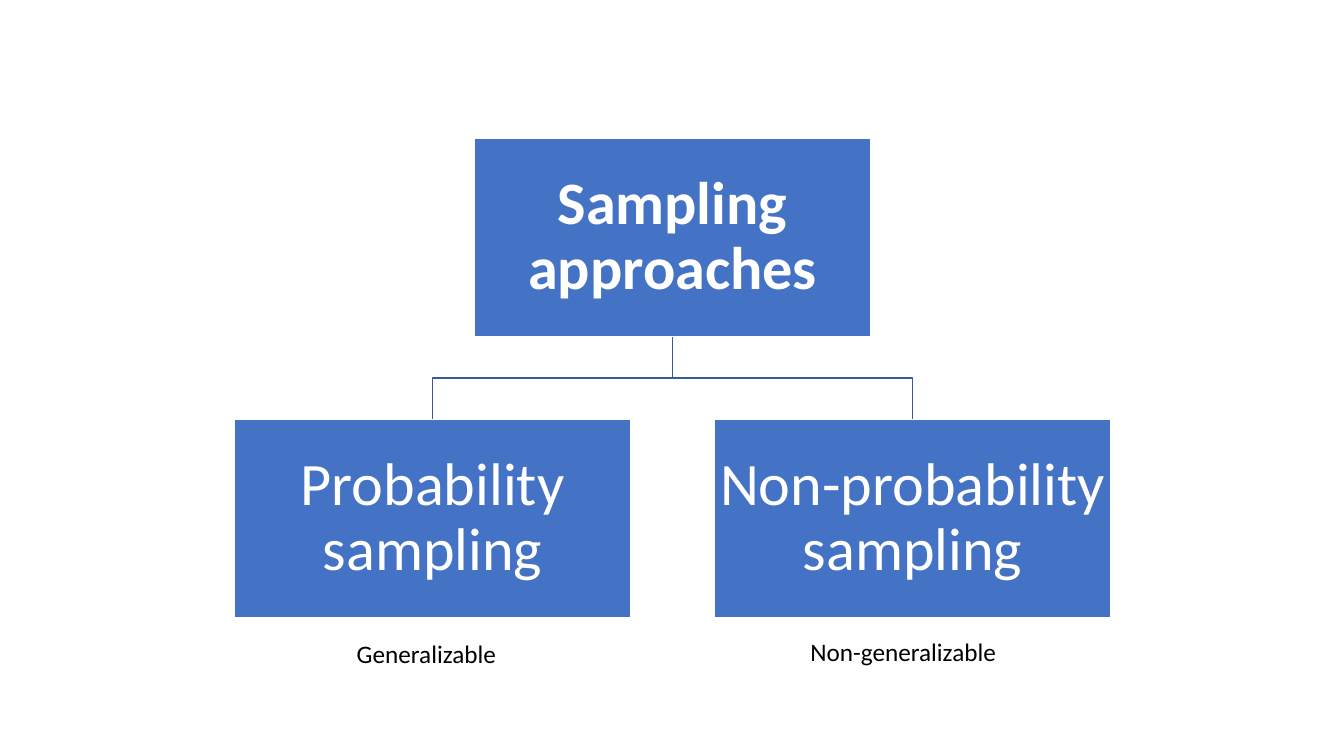
"""Build a slide with a tree of sampling approaches."""
import pptx
import pptx.dml.color
import pptx.enum.shapes
import pptx.enum.text
import pptx.util

Inches, Pt = pptx.util.Inches, pptx.util.Pt
BLUE = pptx.dml.color.RGBColor(0x44, 0x72, 0xC4)
LINE_BLUE = pptx.dml.color.RGBColor(0x36, 0x5B, 0x9D)
WHITE = pptx.dml.color.RGBColor(0xFF, 0xFF, 0xFF)
BLACK = pptx.dml.color.RGBColor(0x00, 0x00, 0x00)
FONT = "Calibri"

BOX_WIDTH, BOX_HEIGHT = 3.93, 1.97
ROOT_CENTER, ROOT_TOP = 6.67, 1.37
BRANCH_OFFSET, BRANCH_TOP = 2.38, 4.16
ROOT_BOTTOM = ROOT_TOP + BOX_HEIGHT
FORK = (ROOT_BOTTOM + BRANCH_TOP) / 2

deck = pptx.Presentation()
deck.slide_width = Inches(13.33)
deck.slide_height = Inches(7.5)
slide = deck.slides.add_slide(deck.slide_layouts[6])

for branch_center in (ROOT_CENTER + BRANCH_OFFSET, ROOT_CENTER - BRANCH_OFFSET):
    builder = slide.shapes.build_freeform(Inches(ROOT_CENTER), Inches(ROOT_BOTTOM))
    bends = [(ROOT_CENTER, FORK), (branch_center, FORK), (branch_center, BRANCH_TOP)]
    builder.add_line_segments([(Inches(x), Inches(y)) for x, y in bends], close=False)
    branch = builder.convert_to_shape()
    branch.shadow.inherit = False
    branch.fill.background()
    branch.line.color.rgb = LINE_BLUE
    branch.line.width = Pt(1)

approaches = [
    ("Sampling approaches", ROOT_CENTER, ROOT_TOP, True),
    ("Probability sampling", ROOT_CENTER - BRANCH_OFFSET, BRANCH_TOP, False),
    ("Non-probability sampling", ROOT_CENTER + BRANCH_OFFSET, BRANCH_TOP, False),
]
for label, center, top, bold in approaches:
    approach = slide.shapes.add_shape(
        pptx.enum.shapes.MSO_SHAPE.RECTANGLE,
        Inches(center - BOX_WIDTH / 2), Inches(top), Inches(BOX_WIDTH), Inches(BOX_HEIGHT))
    approach.shadow.inherit = False
    approach.fill.solid()
    approach.fill.fore_color.rgb = BLUE
    approach.line.color.rgb = WHITE
    approach.line.width = Pt(1)
    frame = approach.text_frame
    frame.word_wrap = True
    frame.vertical_anchor = pptx.enum.text.MSO_ANCHOR.MIDDLE
    frame.margin_left = frame.margin_right = Inches(0.03)
    frame.margin_top = frame.margin_bottom = Inches(0.03)
    paragraph = frame.paragraphs[0]
    paragraph.text = label
    paragraph.alignment = pptx.enum.text.PP_ALIGN.CENTER
    paragraph.line_spacing = 0.9
    paragraph.font.name = FONT
    paragraph.font.size = Pt(43)
    paragraph.font.bold = bold
    paragraph.font.color.rgb = WHITE

captions = [("Generalizable", 3.44, 6.28, 1.7), ("Non-generalizable", 7.94, 6.26, 2.14)]
for wording, left, top, width in captions:
    caption = slide.shapes.add_textbox(Inches(left), Inches(top), Inches(width), Inches(0.4))
    caption.text_frame.word_wrap = True
    caption.text_frame.auto_size = pptx.enum.text.MSO_AUTO_SIZE.SHAPE_TO_FIT_TEXT
    paragraph = caption.text_frame.paragraphs[0]
    paragraph.text = wording
    paragraph.font.name = FONT
    paragraph.font.size = Pt(18)
    paragraph.font.color.rgb = BLACK

deck.save("out.pptx")
